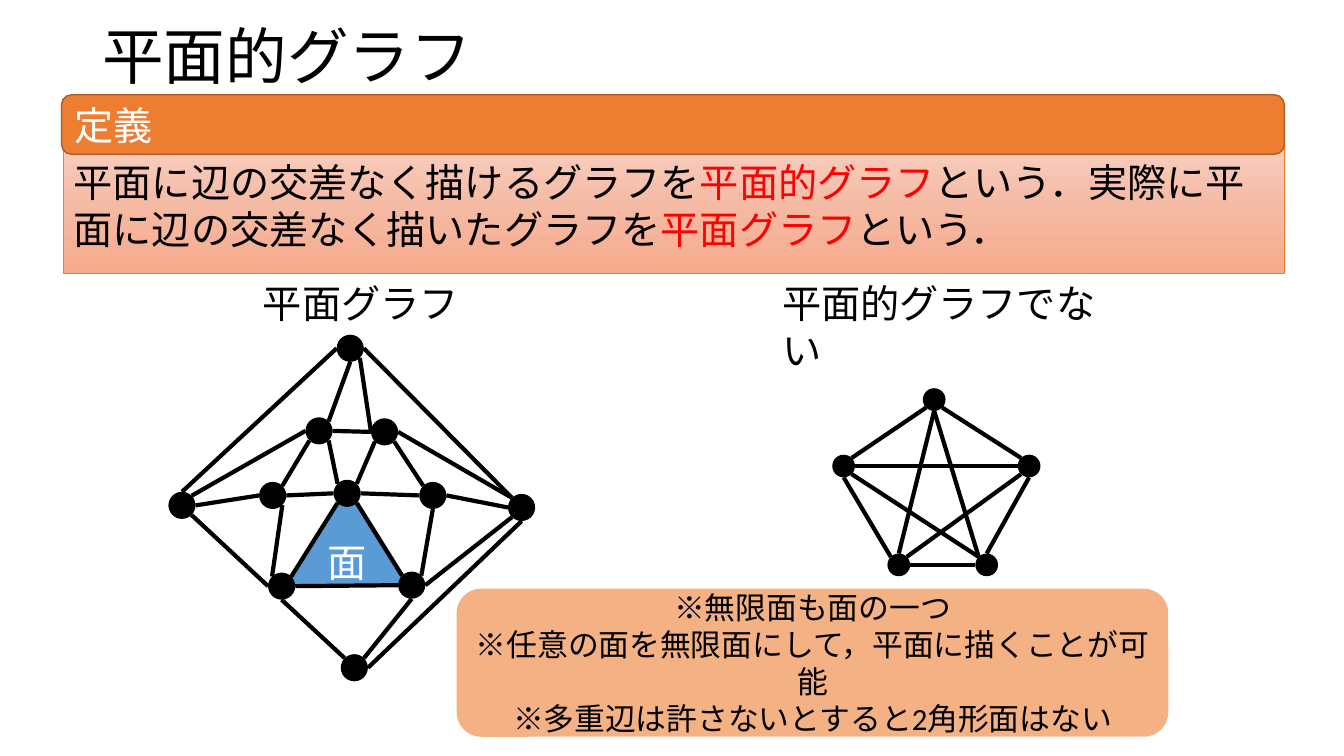
from copy import deepcopy
from math import sqrt

from lxml import etree
from pptx import Presentation
from pptx.dml.color import RGBColor
from pptx.enum import lang, shapes, text
from pptx.oxml import ns
from pptx.util import Pt

COLORS = {
    "black": "000000", "white": "FFFFFF", "red": "FF0000",
    "orange": "ED7D31", "dark orange": "AF5C24", "peach": "F4B183",
    "blue": "5B9BD5", "dark blue": "43739E",
}
DEFINITION_STOPS = [(0, "F9D1C3"), (0.5, "F5BAA4"), (1, "F7AB8D")]
SHAPE = shapes.MSO_SHAPE
MIDDLE, TOP = text.MSO_ANCHOR.MIDDLE, text.MSO_ANCHOR.TOP
LEFT, CENTER = text.PP_ALIGN.LEFT, text.PP_ALIGN.CENTER

deck = Presentation()
deck.slide_width, deck.slide_height = Pt(960), Pt(540)
page = deck.slides.add_slide(deck.slide_layouts[6])


def add_box(kind, place, fill=None, line=None, width=1):
    """Add a preset shape, or a text box when kind is None."""
    place = [Pt(length) for length in place]
    if kind is None:
        return page.shapes.add_textbox(*place)
    box = page.shapes.add_shape(kind, *place)
    box.shadow.inherit = False
    if fill:
        box.fill.solid()
        box.fill.fore_color.rgb = RGBColor.from_string(COLORS[fill])
    if line:
        box.line.color.rgb = RGBColor.from_string(COLORS[line])
        box.line.width = Pt(width)
    else:
        box.line.fill.background()
    return box


def write(box, paras, size=28, color="black", align=LEFT, anchor=MIDDLE, spacing=1.0):
    """Fill a box with paragraphs, each a list of (words, colour or None)."""
    frame = box.text_frame
    frame.word_wrap, frame.vertical_anchor = True, anchor
    font_format = {"name": "Calibri", "size": Pt(size),
                   "language_id": lang.MSO_LANGUAGE_ID.JAPANESE}
    for number, spans in enumerate(paras):
        para = frame.add_paragraph() if number else frame.paragraphs[0]
        para.alignment, para.line_spacing = align, spacing
        for words, span_color in spans:
            span = para.add_run()
            span.text = words
            for name, value in font_format.items():
                setattr(span.font, name, value)
            span.font.color.rgb = RGBColor.from_string(COLORS[span_color or color])


# Face, title and definition
face = add_box(SHAPE.ISOSCELES_TRIANGLE, (204.5, 350, 85.7, 68.4), "blue", "dark blue")
face.adjustments[0] = 0.505
write(face, [[("面", None)]], color="white", align=CENTER)

title = add_box(None, (66, -10, 828, 104.4))
write(title, [[("平面的グラフ", None)]], size=44, spacing=0.9)

definition = add_box(SHAPE.RECTANGLE, (45.5, 98, 872, 97.2), line="orange", width=0.5)
definition.fill.gradient()
definition.fill.gradient_angle = 270
stop_list = next(definition.element.iter(ns.qn("a:gsLst")))
stop_list.insert(1, deepcopy(stop_list[0]))
for stop, (position, shade) in zip(definition.fill.gradient_stops, DEFINITION_STOPS):
    stop.position = position
    stop.color.rgb = RGBColor.from_string(shade)
write(definition, [[
    ("平面に辺の交差なく描けるグラフを", None),
    ("平面的グラフ", "red"),
    ("という．実際に平面に辺の交差なく描いたグラフを", None),
    ("平面グラフ", "red"),
    ("という．", None),
]])

heading = add_box(SHAPE.ROUNDED_RECTANGLE, (44, 67.7, 873.4, 42.5), "orange", "dark orange")
write(heading, [[("定義", None)]], color="white")

# Graphs: vertex centres, and edges as "vertex side vertex side"
plane_graph = {
    "diameter": 19.4,
    "vertices": {
        "top": (250.2, 248.8), "upleft": (227.9, 307.8), "upright": (274.7, 308.5),
        "midleft": (194.8, 353.9), "west": (130, 361), "lowleft": (201.2, 418.7),
        "lowright": (294.1, 418), "midright": (309.2, 353.9), "east": (372.6, 362.5),
        "centre": (248, 352.4), "bottom": (253.1, 477),
    },
    "edges": [
        "top S upleft NE", "upleft SW midleft NE", "top W west N",
        "upleft SE centre NW", "top SE upright W", "upright SW centre NE",
        "midright NW upright SE", "midleft W west E", "midleft SE lowleft NW",
        "lowleft NE centre SW", "lowright NW centre SE", "lowleft S bottom NW",
        "top E east NW", "midright S lowright NE", "east W midright E",
        "lowright S bottom NE", "east S bottom E", "upleft E upright W",
        "lowleft E lowright W", "centre E midright W", "midleft E centre W",
        "lowright E east SW", "west SE lowleft W", "west NE upleft W",
        "upright E east NW",
    ],
}
complete_graph = {
    "diameter": 16.2,
    "vertices": {
        "top": (667.3, 285.4), "left": (602.6, 332.9), "right": (735.1, 332.9),
        "lowleft": (642, 403.5), "lowright": (704.8, 403.5),
    },
    "edges": [
        "top S lowleft N", "left E right W", "lowright NW top S",
        "lowright NW left SE", "right SW lowleft NE", "top SW left NE",
        "right NW top SE", "lowright N right S", "lowleft E lowright W",
        "left S lowleft NW",
    ],
}
for graph in (plane_graph, complete_graph):
    diameter, vertices = graph["diameter"], graph["vertices"]
    for x, y in vertices.values():
        corner = (x - diameter / 2, y - diameter / 2)
        add_box(SHAPE.FLOWCHART_CONNECTOR, (*corner, diameter, diameter), "black")
    for edge in graph["edges"]:
        start, start_side, end, end_side = edge.split()
        ends = []
        for vertex, side in ((start, start_side), (end, end_side)):
            x, y = vertices[vertex]
            reach = diameter / 2 / sqrt(len(side))
            ends.append(Pt(x + reach * (("E" in side) - ("W" in side))))
            ends.append(Pt(y + reach * (("S" in side) - ("N" in side))))
        line = page.shapes.add_connector(shapes.MSO_CONNECTOR.STRAIGHT, *ends)
        line.line.color.rgb = RGBColor.from_string(COLORS["black"])
        line.line.width = Pt(3)
        etree.SubElement(line.element.spPr, ns.qn("a:effectLst"))

# Captions and remarks
for caption, left, width in (("平面グラフ", 180.7, 187.2), ("平面的グラフでない", 551.5, 257.8)):
    write(add_box(None, (left, 195.8, width, 41)), [[(caption, None)]], anchor=TOP)

remarks = add_box(SHAPE.ROUNDED_RECTANGLE, (326.2, 420.5, 508.3, 105.8), "peach")
write(remarks, [
    [("※無限面も面の一つ", None)],
    [("※任意の面を無限面にして，平面に描くことが可能", None)],
    [("※多重辺は許さないとすると2角形面はない", None)],
], size=22, align=CENTER)

deck.save("out.pptx")
